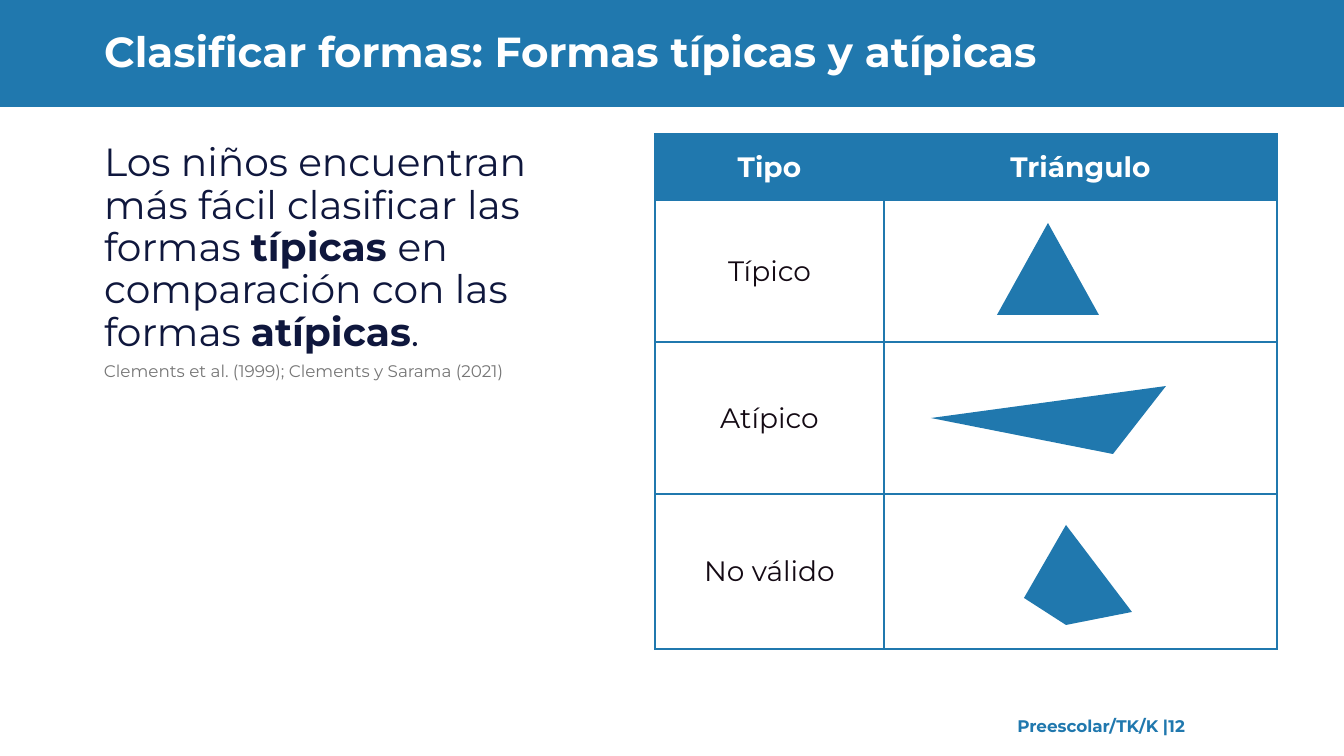
from lxml.etree import SubElement
from pptx import Presentation
from pptx.dml.color import RGBColor
from pptx.enum.shapes import MSO_SHAPE as Preset
from pptx.enum.text import MSO_ANCHOR as Anchor, MSO_AUTO_SIZE as Fit, PP_ALIGN as Align
from pptx.oxml.ns import qn
from pptx.util import Emu, Pt

BLUE, WHITE, NAVY, INK, GRAY = "2078AE", "FFFFFF", "0F173D", "140A14", "767676"
EMU_PER_PX = 914400 / 100.8


def px(length):
    return Emu(round(length * EMU_PER_PX))


def paint(color_owner, hex_color):
    color_owner.rgb = RGBColor.from_string(hex_color)


def fill_solid(target, hex_color):
    target.fill.solid()
    paint(target.fill.fore_color, hex_color)


def write(frame, *runs, font="Montserrat", size=20, color=INK, bold=False,
          align=Align.LEFT, spacing=1.0, tabs=()):
    paragraph = frame.paragraphs[0]
    paragraph.alignment = align
    paragraph.line_spacing = spacing
    paragraph.space_before = Pt(0)
    properties = paragraph._p.get_or_add_pPr()
    properties.set("marL", "0")
    properties.set("indent", "0")
    SubElement(properties, qn("a:buNone"))
    if tabs:
        stops = SubElement(properties, qn("a:tabLst"))
        for stop in tabs:
            SubElement(stops, qn("a:tab"), pos=str(px(stop)), algn="l")
    for index, text in enumerate(runs):
        run = paragraph.add_run()
        run.text = text
        run.font.name = font
        run.font.size = Pt(size)
        run.font.bold = bold or index % 2 == 1
        paint(run.font.color, color)


class ShapesSlide:
    def __init__(self, deck, accent=BLUE):
        self.accent = accent
        self.slide = deck.slides.add_slide(deck.slide_layouts[1])
        self.shapes = self.slide.shapes

    def style(self, shape):
        shape.shadow.inherit = False
        fill_solid(shape, self.accent)
        shape.line.fill.background()
        return shape

    def preset(self, kind, *box):
        return self.style(self.shapes.add_shape(kind, *map(px, box)))

    def band(self, *box):
        band = self.preset(Preset.RECTANGLE, *box)
        self.shapes._spTree.insert(2, band._element)

    def polygon(self, start, *corners):
        outline = self.shapes.build_freeform(*start, scale=EMU_PER_PX)
        outline.add_line_segments(corners, close=True)
        return self.style(outline.convert_to_shape())

    def placeholder(self, index, box, *runs, fit=Fit.NONE, **text_format):
        holder = self.slide.placeholders[index]
        holder.left, holder.top, holder.width, holder.height = map(px, box)
        frame = holder.text_frame
        frame.auto_size = fit
        frame.vertical_anchor = Anchor.TOP
        write(frame, *runs, **text_format)

    def label(self, box, text, anchor=Anchor.TOP, **text_format):
        frame = self.shapes.add_textbox(*map(px, box)).text_frame
        frame.word_wrap = True
        frame.margin_right = 0
        frame.vertical_anchor = anchor
        write(frame, text, **text_format)

    def border(self, cell):
        properties = cell._tc.get_or_add_tcPr()
        for position, side in enumerate(("lnL", "lnR", "lnT", "lnB")):
            line = SubElement(properties, qn(f"a:{side}"), w=str(Pt(1)))
            solid = SubElement(line, qn("a:solidFill"))
            SubElement(solid, qn("a:srgbClr"), val=self.accent)
            properties.insert(position, line)

    def table(self, left, top, widths, heights, rows):
        table = self.shapes.add_table(len(rows), len(widths), px(left), px(top),
                                      px(sum(widths)), px(sum(heights))).table
        table.first_row = table.horz_banding = False
        for column, width in zip(table.columns, widths):
            column.width = px(width)
        for row_index, (row, height, texts) in enumerate(zip(table.rows, heights, rows)):
            row.height = px(height)
            header = row_index == 0
            for cell, text in zip(row.cells, texts):
                fill_solid(cell, self.accent if header else WHITE)
                cell.vertical_anchor = Anchor.MIDDLE
                self.border(cell)
                if text:
                    write(cell.text_frame, text, color=WHITE if header else INK,
                          bold=header, align=Align.CENTER)


def main():
    deck = Presentation()
    deck.slide_width, deck.slide_height = px(1344), px(756)
    page = ShapesSlide(deck)

    page.band(0, 0, 1344, 107)
    page.placeholder(0, (94, 26, 1194, 56),
                     "Clasificar formas: Formas típicas y atípicas",
                     fit=Fit.SHAPE_TO_FIT_TEXT, size=30, color=WHITE, bold=True, spacing=0.9)
    page.placeholder(1, (94, 138, 519, 480),
                     "Los niños encuentran más fácil clasificar las formas ", "típicas ",
                     "en comparación con las formas ", "atípicas", ".",
                     size=28, color=NAVY, spacing=0.9)
    page.label((94, 356, 519, 30), "Clements et al. (1999); Clements y Sarama (2021)",
               size=12, color=GRAY)
    page.label((957, 706, 384, 40), "\tPreescolar/TK/K |\t12", anchor=Anchor.MIDDLE,
               size=12, color=BLUE, bold=True, tabs=(171, 346))

    page.table(655, 134, (229, 393), (66, 142, 152, 155),
               (("Tipo", "Triángulo"), ("Típico", ""), ("Atípico", ""), ("No válido", "")))
    page.preset(Preset.ISOSCELES_TRIANGLE, 997, 223, 102, 92)
    page.polygon((1113, 454), (931, 418), (1166, 386))
    page.polygon((1066, 525), (1024, 598), (1066, 625), (1132, 612))

    deck.save("out.pptx")


if __name__ == "__main__":
    main()
